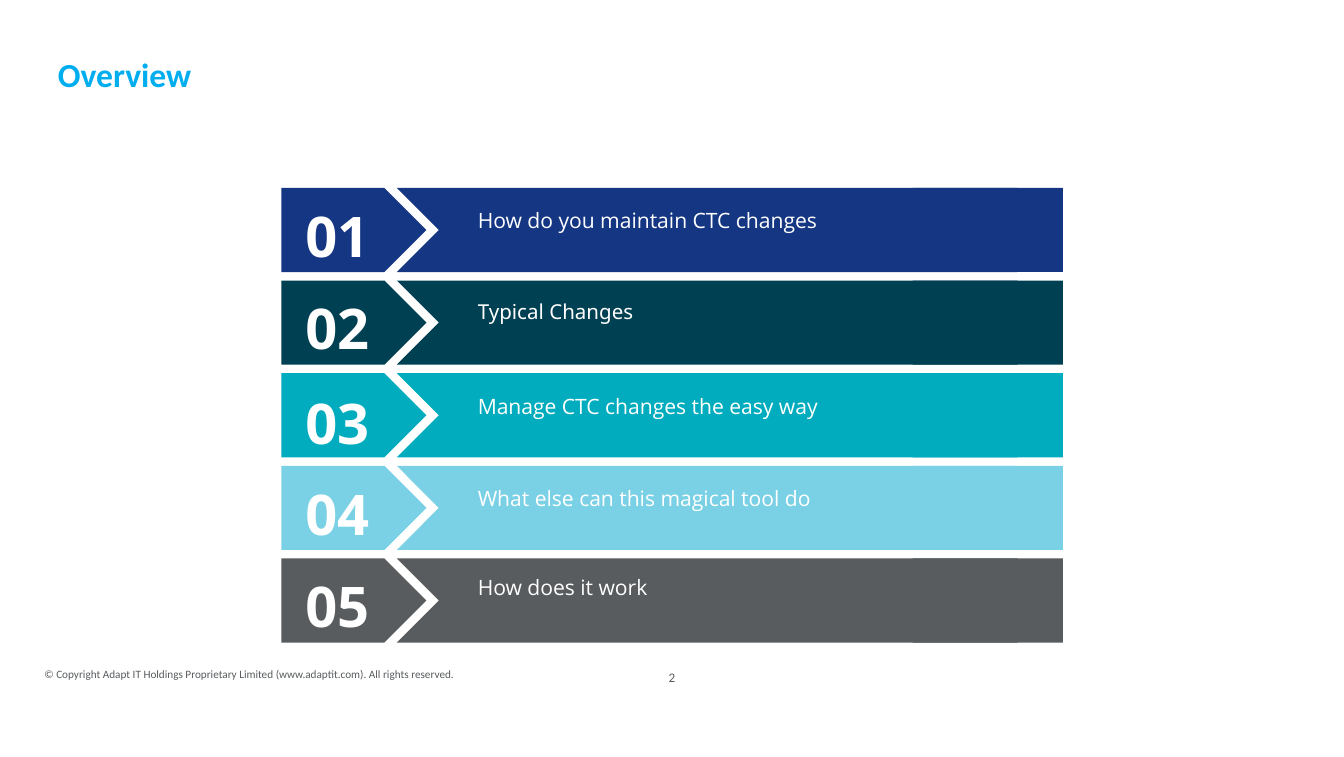
from pptx import Presentation
from pptx.dml.color import RGBColor
from pptx.enum.shapes import MSO_SHAPE
from pptx.enum.text import MSO_ANCHOR, PP_ALIGN
from pptx.util import Cm, Pt

PENTAGON, CHEVRON, RECTANGLE = MSO_SHAPE.PENTAGON, MSO_SHAPE.CHEVRON, MSO_SHAPE.RECTANGLE
LEFT, CENTER, JUSTIFY = PP_ALIGN.LEFT, PP_ALIGN.CENTER, PP_ALIGN.JUSTIFY
TOP, MIDDLE = MSO_ANCHOR.TOP, MSO_ANCHOR.MIDDLE

WHITE, GREY, SKY = "FFFFFF", "585C5E", "00AEEF"
FIRST_TOP, LAST_TOP, BAR_HEIGHT = 3.55, 10.55, 1.59

# Bar colour, number top, topic top, topic, topic font, topic size
AGENDA = [
    ("153683", 3.68, 3.79, "How do you maintain CTC changes", "Open Sans", 11.25),
    ("004053", 5.42, 5.52, "Typical Changes", "Noto Sans", 11),
    ("00ACBD", 7.22, 7.3, "Manage CTC changes the easy way", "Open Sans", 11.25),
    ("7AD0E4", 8.94, 9.04, "What else can this magical tool do", "Open Sans", 11.25),
    (GREY, 10.67, 10.73, "How does it work", "Open Sans", 11.25),
]


def rgb(value):
    return RGBColor.from_string(value)


def write(frame, text, *, size, color, font="Calibri", bold=False,
          align=LEFT, anchor=TOP, line_spacing=None, inset=None):
    frame.word_wrap = True
    frame.vertical_anchor = anchor
    if inset is not None:
        frame.margin_left = frame.margin_right = Cm(inset)
        frame.margin_top = frame.margin_bottom = Cm(inset)
    paragraph = frame.paragraphs[0]
    paragraph.alignment = align
    if line_spacing:
        paragraph.line_spacing = Pt(line_spacing)
    run = paragraph.add_run()
    run.text = text
    run.font.name = font
    run.font.size = Pt(size)
    run.font.bold = bold
    run.font.color.rgb = rgb(color)


def add_text(slide, box, text, **style):
    label = slide.shapes.add_textbox(*map(Cm, box))
    write(label.text_frame, text, **style)


def add_block(slide, kind, box, color):
    block = slide.shapes.add_shape(kind, *map(Cm, box))
    block.shadow.inherit = False
    block.fill.solid()
    block.fill.fore_color.rgb = rgb(color)
    block.line.fill.background()


def add_title(slide, text):
    title = slide.shapes.title
    title.left, title.top, title.width, title.height = map(Cm, (0.84, 0.86, 17.5, 2.69))
    write(title.text_frame, text, size=18, color=SKY, bold=True, line_spacing=22.6)


def add_bar(slide, top, color):
    """Number arrow and topic band, squared off at the right end."""
    for kind, left, width in ((PENTAGON, 5.32, 2.74), (CHEVRON, 7.5, 12.52),
                              (RECTANGLE, 17.25, 2.84)):
        add_block(slide, kind, (left, top, width, BAR_HEIGHT), color)


def add_agenda(slide):
    pitch = (LAST_TOP - FIRST_TOP) / (len(AGENDA) - 1)
    for index, (color, number_top, topic_top, topic, font, size) in enumerate(AGENDA):
        add_bar(slide, FIRST_TOP + index * pitch, color)
        add_text(slide, (5.45, number_top, 1.85, 1.37), f"{index + 1:02}",
                 size=30, color=WHITE, font="Open Sans", bold=True, align=CENTER)
        add_text(slide, (8.78, topic_top, 8.59, 0.74), topic,
                 size=size, color=WHITE, font=font, align=JUSTIFY)


def add_footer(slide):
    add_text(slide, (0.84, 12.15, 8.76, 1.17),
             "© Copyright Adapt IT Holdings Proprietary Limited (www.adaptit.com). "
             "All rights reserved.",
             size=6, color=GREY, anchor=MIDDLE, inset=0)
    add_text(slide, (10.95, 12.14, 3.5, 1.32), "2",
             size=7, color=GREY, align=CENTER, anchor=MIDDLE, inset=0)


def main():
    presentation = Presentation()
    presentation.slide_width, presentation.slide_height = Cm(25.4), Cm(14.3)
    title_only = presentation.slide_layouts[5]
    slide = presentation.slides.add_slide(title_only)
    add_title(slide, "Overview")
    add_agenda(slide)
    add_footer(slide)
    presentation.save("out.pptx")


if __name__ == "__main__":
    main()
